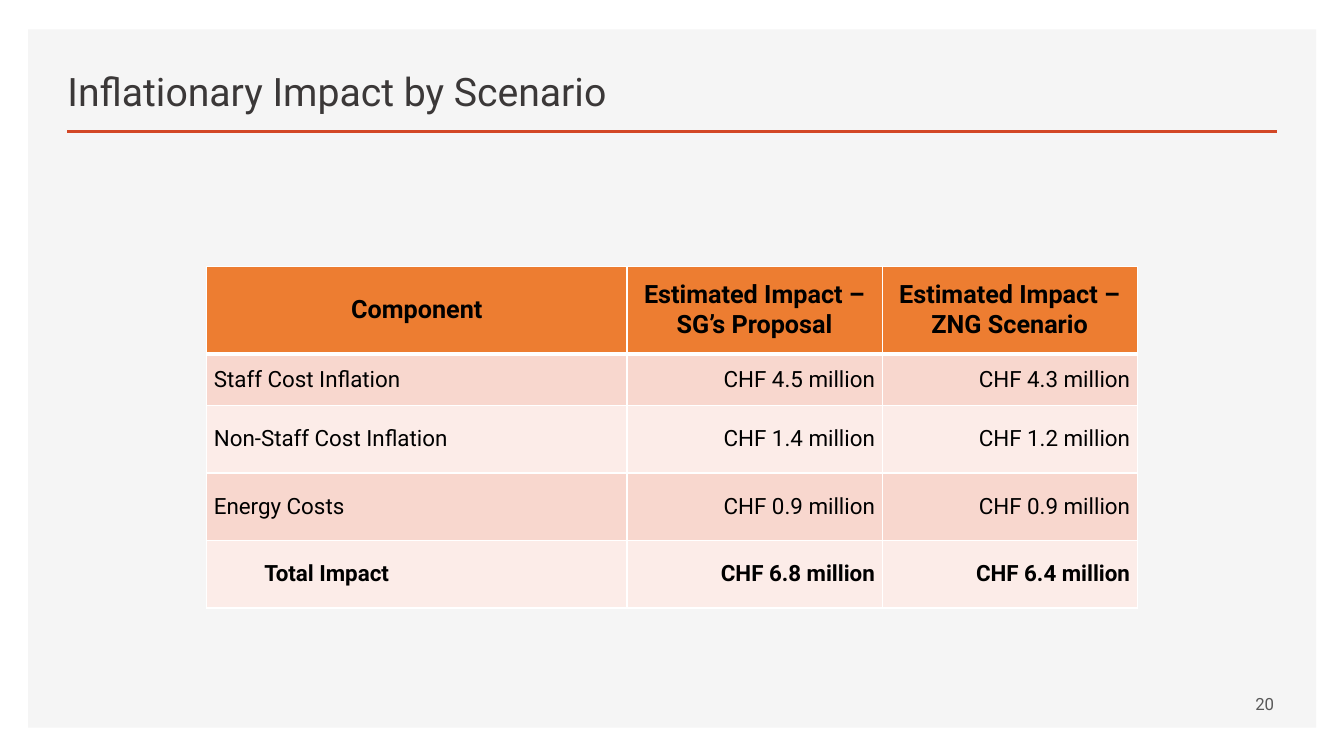
"""Build the slide on inflationary impact by scenario."""
from lxml import etree
from pptx import Presentation
from pptx import util as u
from pptx.dml.color import RGBColor
from pptx.enum import shapes, text
from pptx.oxml import parse_xml
from pptx.oxml.ns import qn

NS = "http://schemas.openxmlformats.org/drawingml/2006/main"
CENTER, LEFT, RIGHT = text.PP_ALIGN.CENTER, text.PP_ALIGN.LEFT, text.PP_ALIGN.RIGHT


def rgb(value):
    return RGBColor.from_string(value)


def style(p, size, color, align=LEFT, bold=False):
    p.alignment = align
    f = p.runs[0].font
    f.name, f.size, f.bold = "Roboto", u.Pt(size), bold
    f.color.rgb = rgb(color)


prs = Presentation()
prs.slide_width, prs.slide_height = u.Cm(33.87), u.Cm(19.05)
s = prs.slides.add_slide(prs.slide_layouts[6])

panel = s.shapes.add_shape(shapes.MSO_SHAPE.RECTANGLE, u.Cm(0.71), u.Cm(0.74), u.Cm(32.46), u.Cm(17.6))
panel.shadow.inherit = False
panel.fill.solid()
panel.fill.fore_color.rgb = rgb("F5F5F5")
panel.line.fill.background()

rule = s.shapes.add_connector(shapes.MSO_CONNECTOR.STRAIGHT, u.Cm(1.69), u.Cm(3.32), u.Cm(32.18), u.Cm(3.32))
rule.line.color.rgb = rgb("D24726")
rule.line.width = u.Pt(2)
etree.SubElement(rule._element.spPr, qn("a:effectLst"))

for words, box, anchor, size, color, align in [
    ("Inflationary Impact by Scenario", (1.45, 1.24, 23.8, 1.78), text.MSO_ANCHOR.BOTTOM, 28, "3B3838", LEFT),
    ("20", (23.27, 17.22, 9.09, 1.02), text.MSO_ANCHOR.MIDDLE, 12, "595959", RIGHT),
]:
    tf = s.shapes.add_textbox(*[u.Cm(v) for v in box]).text_frame
    tf.word_wrap = True
    tf.vertical_anchor = anchor
    tf.text = words
    style(tf.paragraphs[0], size, color, align)

rows = [
    ("Component", "Estimated Impact – SG’s Proposal", "Estimated Impact – ZNG Scenario"),
    ("Staff Cost Inflation", "CHF 4.5 million", "CHF 4.3 million"),
    ("Non-Staff Cost Inflation", "CHF 1.4 million", "CHF 1.2 million"),
    ("Energy Costs", "CHF 0.9 million", "CHF 0.9 million"),
    ("Total Impact", "CHF 6.8 million", "CHF 6.4 million"),
]
widths = [10.59, 6.43, 6.43]
heights = [2.21, 1.3, 1.7, 1.7, 1.7]
table = s.shapes.add_table(
    len(rows), len(widths), u.Cm(5.21), u.Cm(6.71), u.Cm(sum(widths)), u.Cm(sum(heights))
).table
for column, width in zip(table.columns, widths):
    column.width = u.Cm(width)

for i, (row, height) in enumerate(zip(rows, heights)):
    table.rows[i].height = u.Cm(height)
    header, total = i == 0, i == len(rows) - 1
    for j, words in enumerate(row):
        cell = table.cell(i, j)
        tcPr = cell._tc.get_or_add_tcPr()
        for side in "LRTB":
            thick = (header and side == "B") or (i == 1 and side == "T")
            tcPr.append(parse_xml(
                f'<a:ln{side} xmlns:a="{NS}" w="{u.Pt(3 if thick else 1)}"><a:solidFill>'
                f'<a:srgbClr val="FFFFFF"/></a:solidFill></a:ln{side}>'
            ))
        cell.fill.solid()
        cell.fill.fore_color.rgb = rgb("ED7D31" if header else "F8D7CE" if i % 2 else "FCECE8")
        cell.vertical_anchor = text.MSO_ANCHOR.MIDDLE
        cell.text = words
        p = cell.text_frame.paragraphs[0]
        if header:
            style(p, 18, "000000", CENTER, True)
            continue
        style(p, 16, "000000", RIGHT if j else LEFT, total)
        p.space_before = p.space_after = u.Pt(3)
        cell.margin_left = cell.margin_right = u.Cm(0.18)
        cell.margin_top = cell.margin_bottom = 0
        if total:
            p.level = 1
            p._p.get_or_add_pPr().set("marL", str(u.Cm(1.27)))

prs.save("out.pptx")
